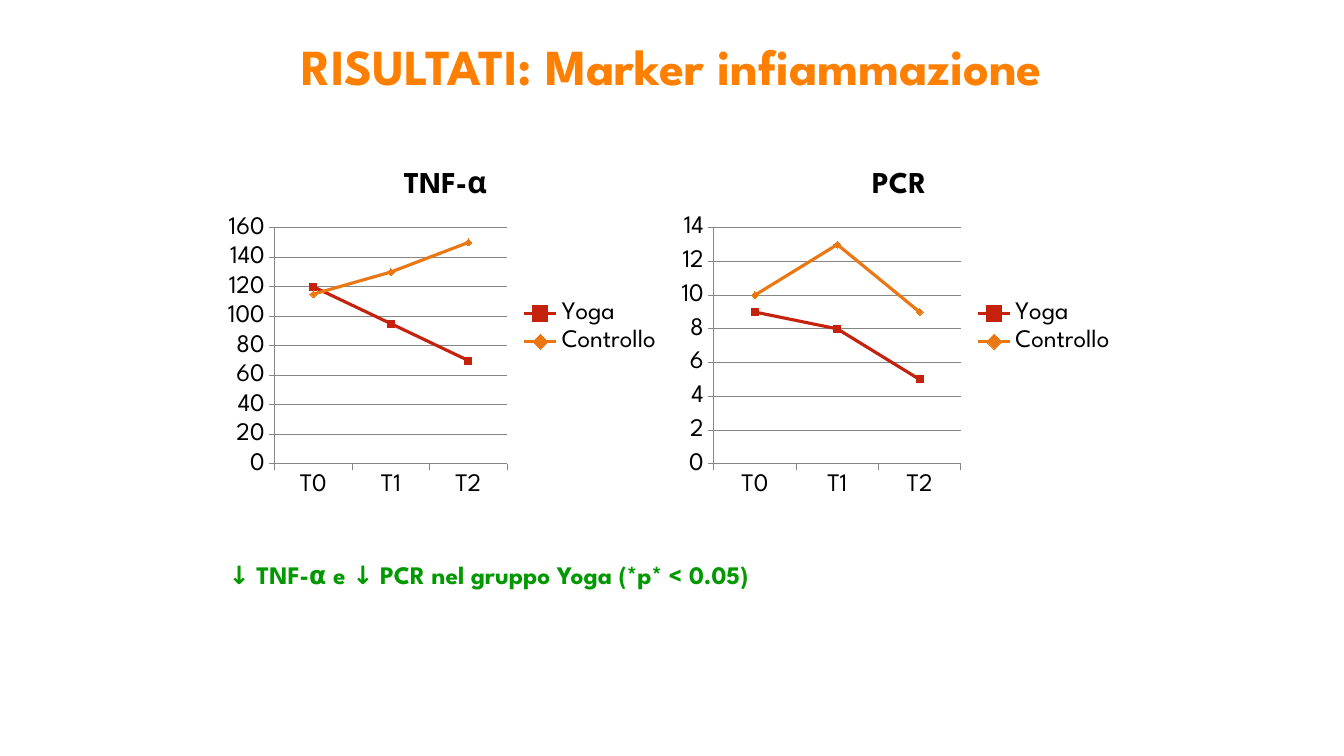
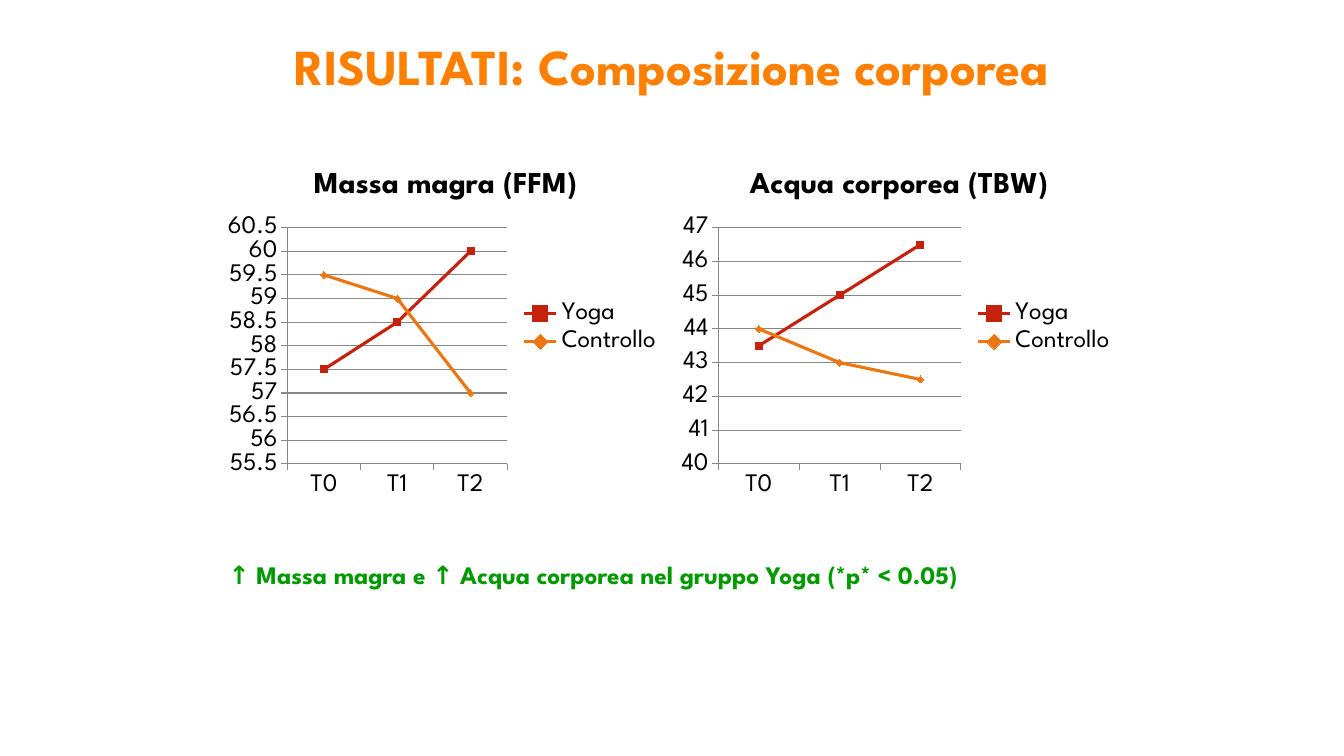
from dataclasses import dataclass

from pptx import Presentation
from pptx.chart.data import CategoryChartData
from pptx.dml.color import RGBColor
from pptx.enum.chart import XL_CHART_TYPE, XL_LEGEND_POSITION, XL_MARKER_STYLE, XL_TICK_MARK
from pptx.enum.text import PP_ALIGN
from pptx.util import Emu, Pt

LINE_MARKERS = XL_CHART_TYPE.LINE_MARKERS
LEGEND_RIGHT = XL_LEGEND_POSITION.RIGHT
SQUARE, DIAMOND = XL_MARKER_STYLE.SQUARE, XL_MARKER_STYLE.DIAMOND
TICK_OUTSIDE = XL_TICK_MARK.OUTSIDE
LEFT, CENTER = PP_ALIGN.LEFT, PP_ALIGN.CENTER

EMU_PER_PX = 9144  # 100 px to the inch
PAGE_WIDTH, PAGE_HEIGHT = 1333, 750
CHART_WIDTH, CHART_HEIGHT, CHART_TOP = 450, 350, 150
CHARTS_LEFT = (PAGE_WIDTH - 2 * CHART_WIDTH) // 2 + 1
TIMES = ("T0", "T1", "T2")


@dataclass(frozen=True)
class Theme:
    font: str = "League Spartan"
    title: RGBColor = RGBColor(0xFF, 0x80, 0x00)
    finding: RGBColor = RGBColor(0x00, 0x99, 0x00)
    text: RGBColor = RGBColor(0x00, 0x00, 0x00)
    grid: RGBColor = RGBColor(0x86, 0x86, 0x86)
    yoga: RGBColor = RGBColor(0xC4, 0x22, 0x0D)
    control: RGBColor = RGBColor(0xEB, 0x77, 0x12)
    title_size: float = 36
    chart_title_size: float = 21.6
    body_size: float = 18
    grid_width: float = 0.75
    series_width: float = 2.25
    marker_size: int = 5


THEME = Theme()
SERIES_STYLES = ((THEME.yoga, SQUARE), (THEME.control, DIAMOND))


@dataclass(frozen=True)
class Trend:
    title: str
    yoga: tuple[float, ...]
    control: tuple[float, ...]
    low: float
    high: float
    step: float


@dataclass(frozen=True)
class ResultPage:
    title: str
    trends: tuple[Trend, ...]
    finding: str


PAGES = (
    ResultPage(
        "RISULTATI: Marker infiammazione",
        (
            Trend("TNF-α", (120, 95, 70), (115, 130, 150), 0, 160, 20),
            Trend("PCR", (9, 8, 5), (10, 13, 9), 0, 14, 2),
        ),
        "↓ TNF-α e ↓ PCR nel gruppo Yoga (*p* < 0.05)",
    ),
    ResultPage(
        "RISULTATI: Composizione corporea",
        (
            Trend("Massa magra (FFM)", (57.5, 58.5, 60), (59.5, 59, 57), 55.5, 60.5, 0.5),
            Trend("Acqua corporea (TBW)", (43.5, 45, 46.5), (44, 43, 42.5), 40, 47, 1),
        ),
        "↑ Massa magra e ↑ Acqua corporea nel gruppo Yoga (*p* < 0.05)",
    ),
)


def px(length: int) -> Emu:
    return Emu(length * EMU_PER_PX)


def style_font(font, size: float, color: RGBColor, bold: bool) -> None:
    font.name = THEME.font
    font.size = Pt(size)
    font.bold = bold
    font.color.rgb = color


def style_line(line, color: RGBColor, width: float) -> None:
    line.color.rgb = color
    line.width = Pt(width)


def add_text(page, text: str, left: int, top: int, width: int, height: int,
             size: float, color: RGBColor, align) -> None:
    box = page.shapes.add_textbox(px(left), px(top), px(width), px(height))
    frame = box.text_frame
    frame.word_wrap = True
    frame.text = text
    para = frame.paragraphs[0]
    para.alignment = align
    style_font(para.runs[0].font, size, color, True)


def add_trend_chart(page, trend: Trend, left: int) -> None:
    data = CategoryChartData()
    data.categories = TIMES
    data.add_series("Yoga", trend.yoga)
    data.add_series("Controllo", trend.control)
    chart = page.shapes.add_chart(LINE_MARKERS, px(left), px(CHART_TOP),
                                  px(CHART_WIDTH), px(CHART_HEIGHT), data).chart
    style_font(chart.font, THEME.body_size, THEME.text, False)

    # Title and legend
    chart.has_title = True
    title_frame = chart.chart_title.text_frame
    title_frame.text = trend.title
    style_font(title_frame.paragraphs[0].runs[0].font,
               THEME.chart_title_size, THEME.text, True)
    chart.has_legend = True
    chart.legend.position = LEGEND_RIGHT
    chart.legend.include_in_layout = False

    # Axes and grid
    for axis in (chart.category_axis, chart.value_axis):
        axis.major_tick_mark = TICK_OUTSIDE
        style_line(axis.format.line, THEME.grid, THEME.grid_width)
    values = chart.value_axis
    values.minimum_scale = trend.low
    values.maximum_scale = trend.high
    values.major_unit = trend.step
    values.has_major_gridlines = True
    style_line(values.major_gridlines.format.line, THEME.grid, THEME.grid_width)

    # Series
    plot = chart.plots[0]
    plot.vary_by_categories = False
    for series, (color, marker_style) in zip(plot.series, SERIES_STYLES):
        series.smooth = False
        style_line(series.format.line, color, THEME.series_width)
        marker = series.marker
        marker.style = marker_style
        marker.size = THEME.marker_size
        marker.format.fill.solid()
        marker.format.fill.fore_color.rgb = color
        marker.format.line.color.rgb = color


def add_result_page(deck, result: ResultPage) -> None:
    page = deck.slides.add_slide(deck.slide_layouts[6])
    add_text(page, result.title, 0, 30, PAGE_WIDTH, 71,
             THEME.title_size, THEME.title, CENTER)
    for column, trend in enumerate(result.trends):
        add_trend_chart(page, trend, CHARTS_LEFT + column * CHART_WIDTH)
    add_text(page, result.finding, CHARTS_LEFT, 550, 2 * CHART_WIDTH, 41,
             THEME.body_size, THEME.finding, LEFT)


def main() -> None:
    deck = Presentation()
    deck.slide_width, deck.slide_height = px(PAGE_WIDTH), px(PAGE_HEIGHT)
    for result in PAGES:
        add_result_page(deck, result)
    deck.save("out.pptx")


if __name__ == "__main__":
    main()
